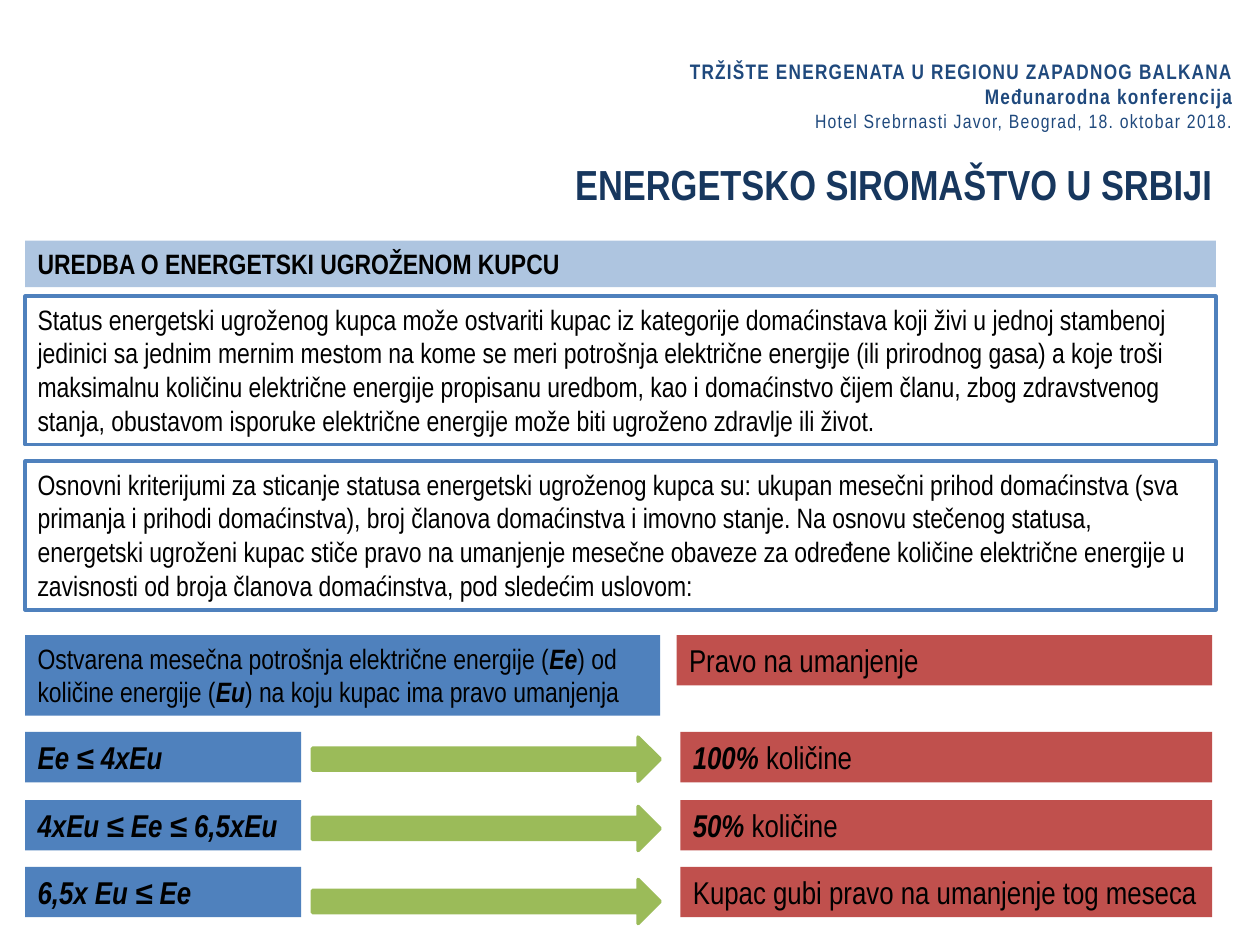
from lxml import etree
from pptx import Presentation
from pptx.dml.color import RGBColor
from pptx.enum.shapes import MSO_SHAPE as Shape
from pptx.enum.text import MSO_ANCHOR as Anchor, MSO_AUTO_SIZE as AutoSize, PP_ALIGN as Align
from pptx.oxml.ns import qn
from pptx.util import Inches, Pt

FONT = "Arial Narrow"
BLACK, BLUE, RED, GREEN = "000000", "4F81BD", "C0504D", "9BBB59"
NAVY, TITLE_BLUE = "1F497D", "17375E"


def color(hex_code):
    return RGBColor.from_string(hex_code)


class SlideBuilder:
    def __init__(self, page):
        self.page = page

    def style(self, paragraph, size, hex_code=BLACK, bold=False, align=Align.LEFT):
        paragraph.alignment = align
        font = paragraph.font
        font.name, font.size, font.bold = FONT, Pt(size), bold
        font.color.rgb = color(hex_code)

    def heading(self, area, lines, hex_code, spacing=None):
        """Right-aligned lines, each given as (text, size, bold)."""
        frame = self.page.shapes.add_textbox(*map(Inches, area)).text_frame
        frame.word_wrap = True
        frame.vertical_anchor = Anchor.MIDDLE
        for number, (text, size, bold) in enumerate(lines):
            para = frame.add_paragraph() if number else frame.paragraphs[0]
            span = para.add_run()
            span.text = text
            self.style(para, size, hex_code, bold, Align.RIGHT)
            if spacing:
                span._r.get_or_add_rPr().set("spc", str(spacing))

    def shape(self, kind, area, fill=None, line=None, alpha=None):
        shape = self.page.shapes.add_shape(kind, *map(Inches, area))
        shape.shadow.inherit = False
        if fill:
            shape.fill.solid()
            shape.fill.fore_color.rgb = color(fill)
        else:
            shape.fill.background()
        if alpha:
            tint = shape.fill._xPr.find(".//" + qn("a:srgbClr"))
            etree.SubElement(tint, qn("a:alpha")).set("val", str(alpha * 1000))
        if line:
            shape.line.color.rgb = color(line)
            shape.line.width = Pt(2)
        else:
            shape.line.fill.background()
        return shape

    def box(self, area, text, size, bold=False, align=Align.LEFT, **look):
        """Text between asterisks is set in bold italic."""
        frame = self.shape(Shape.RECTANGLE, area, **look).text_frame
        frame.word_wrap = True
        frame.auto_size = AutoSize.SHAPE_TO_FIT_TEXT
        frame.vertical_anchor = Anchor.TOP
        para = frame.paragraphs[0]
        self.style(para, size, bold=bold, align=align)
        for number, part in enumerate(text.split("*")):
            if part:
                span = para.add_run()
                span.text = part
                if number % 2:
                    span.font.bold = span.font.italic = True

    def arrow(self, left, top):
        self.shape(Shape.RIGHT_ARROW, (left, top, 2.76, 0.35), fill=GREEN, line=GREEN)


def main():
    deck = Presentation()
    deck.slide_width, deck.slide_height = Inches(10), Inches(7.5)
    builder = SlideBuilder(deck.slides.add_slide(deck.slide_layouts[6]))

    # Conference header and title
    builder.heading((4.76, 0.36, 5.12, 0.79), [
        ("TRŽIŠTE ENERGENATA U REGIONU ZAPADNOG BALKANA", 12, True),
        ("Međunarodna konferencija", 12, True),
        ("Hotel Srebrnasti Javor, Beograd, 18. oktobar 2018.", 11, False),
    ], NAVY, spacing=70)
    builder.heading((0.43, 1.18, 9.29, 0.56),
                    [("ENERGETSKO SIROMAŠTVO U SRBIJI", 24, True)], TITLE_BLUE)

    # Regulation and its two explanations
    left, width = 0.2, 9.45
    builder.box((left, 1.91, width, 0.37), "UREDBA O ENERGETSKI UGROŽENOM KUPCU", 16,
                bold=True, align=Align.JUSTIFY, fill=BLUE, alpha=46)
    explanations = [
        "Status energetski ugroženog kupca može ostvariti kupac iz kategorije domaćinstava "
        "koji živi u jednoj stambenoj jedinici sa jednim mernim mestom na kome se meri "
        "potrošnja električne energije (ili prirodnog gasa) a koje troši maksimalnu količinu "
        "električne energije propisanu uredbom, kao i domaćinstvo čijem članu, zbog "
        "zdravstvenog stanja, obustavom isporuke električne energije može biti ugroženo "
        "zdravlje ili život.",
        "Osnovni kriterijumi za sticanje statusa energetski ugroženog kupca su: ukupan "
        "mesečni prihod domaćinstva (sva primanja i prihodi domaćinstva), broj članova "
        "domaćinstva i imovno stanje. Na osnovu stečenog statusa, energetski ugroženi kupac "
        "stiče pravo na umanjenje mesečne obaveze za određene količine električne energije u "
        "zavisnosti od broja članova domaćinstva, pod sledećim uslovom:",
    ]
    for number, text in enumerate(explanations):
        builder.box((left, 2.35 + number * 1.31, width, 1.18), text, 16, line=BLUE)

    # Column heads
    builder.box((left, 5.04, 5.04, 0.64),
                "Ostvarena mesečna potrošnja električne energije (*Ee*) od količine energije "
                "(*Eu*) na koju kupac ima pravo umanjenja", 16, fill=BLUE)
    builder.box((5.37, 5.04, 4.25, 0.4), "Pravo na umanjenje", 18, fill=RED)

    # Consumption level, arrow, reduction
    levels = [
        (5.81, 5.85, "*Ee ≤ 4xEu*", "*100% *količine"),
        (6.35, 6.4, "*4xEu ≤ Ee ≤ 6,5xEu*", "*50% *količine"),
        (6.88, 6.98, "*6,5x Eu ≤ Ee*", "Kupac gubi pravo na umanjenje tog meseca"),
    ]
    for top, arrow_top, level, reduction in levels:
        builder.box((left, top, 2.19, 0.4), level, 18, fill=BLUE)
        builder.arrow(2.48, arrow_top)
        builder.box((5.4, top, 4.22, 0.4), reduction, 18, fill=RED)

    deck.save("out.pptx")


if __name__ == "__main__":
    main()
